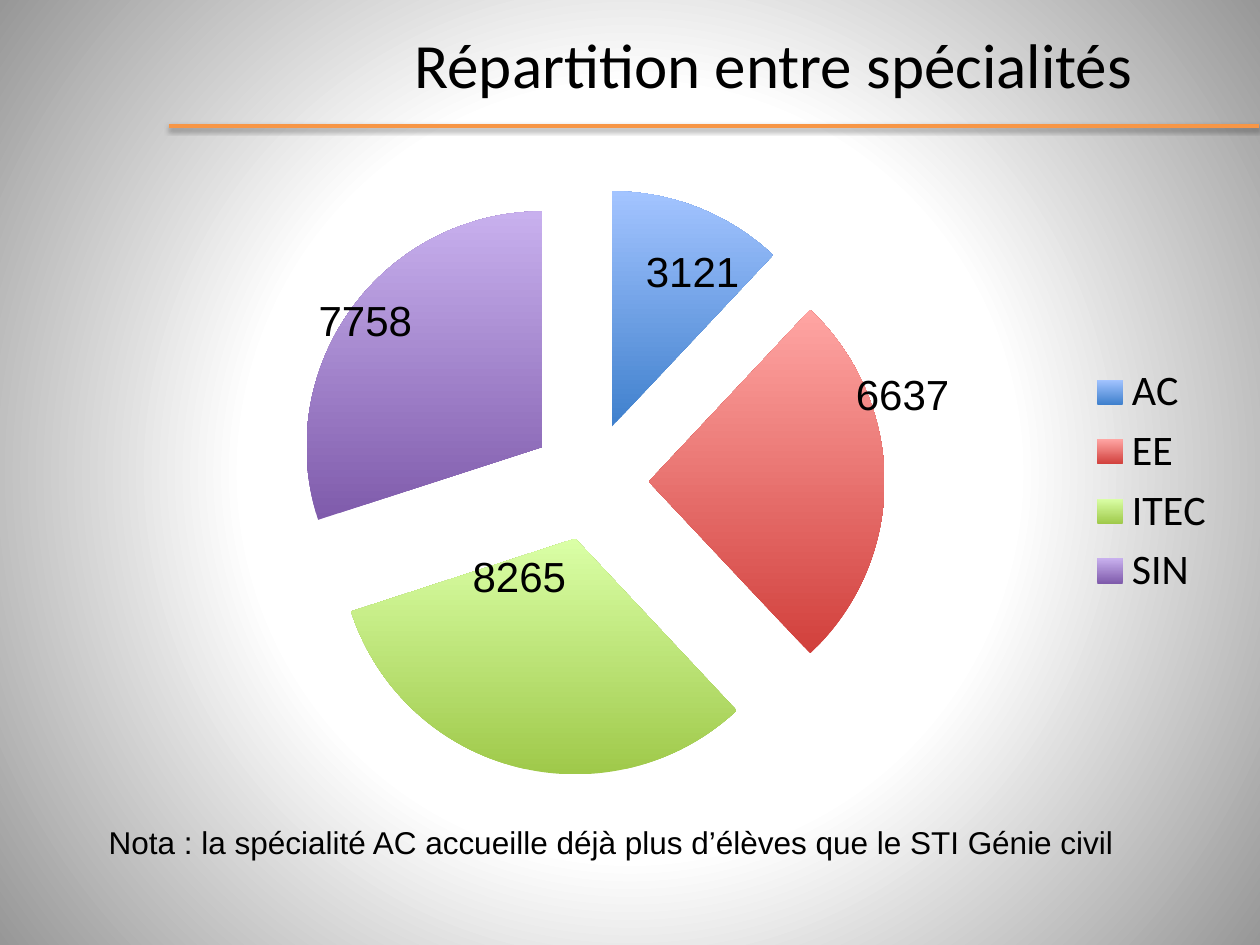
"""Build the slide showing how pupils are split between specialities."""
import pptx
import pptx.chart.data
import pptx.dml.color
import pptx.enum.chart
import pptx.enum.shapes
import pptx.enum.text
import pptx.oxml
import pptx.oxml.ns
import pptx.util

Pt = pptx.util.Pt
RGBColor = pptx.dml.color.RGBColor

BLACK = RGBColor(0x00, 0x00, 0x00)
ORANGE = RGBColor(0xF7, 0x96, 0x46)

TITLE = "Répartition entre spécialités"
NOTE = "Nota : la spécialité AC accueille déjà plus d’élèves que le STI Génie civil"
SPECIALITIES = [
    ("AC", 12, RGBColor(0x3F, 0x80, 0xCD), RGBColor(0xA3, 0xC4, 0xFF)),
    ("EE", 26, RGBColor(0xD1, 0x40, 0x3C), RGBColor(0xFF, 0xA5, 0xA3)),
    ("ITEC", 32, RGBColor(0x9F, 0xC9, 0x4A), RGBColor(0xDA, 0xFF, 0xA6)),
    ("SIN", 30, RGBColor(0x7F, 0x5B, 0xAB), RGBColor(0xC8, 0xB0, 0xEE)),
]
HEADCOUNTS = [
    ("3121", 362, 137),
    ("6637", 482, 207),
    ("8265", 263, 311),
    ("7758", 175, 165),
]

NS = pptx.oxml.ns.nsdecls("a")
BACKDROP = f"""<a:gradFill {NS} rotWithShape="1"><a:gsLst>
<a:gs pos="0"><a:srgbClr val="FFFFFF"/></a:gs>
<a:gs pos="49000"><a:srgbClr val="FFFFFF"/></a:gs>
<a:gs pos="100000"><a:srgbClr val="979797"/></a:gs></a:gsLst>
<a:path path="circle"><a:fillToRect l="50000" t="50000" r="50000" b="50000"/></a:path>
</a:gradFill>"""
RULE_SHADOW = f"""<a:effectLst {NS}>
<a:outerShdw blurRad="{Pt(3.1)}" dist="{Pt(1.6)}" dir="5400000" rotWithShape="0">
<a:srgbClr val="000000"><a:alpha val="38000"/></a:srgbClr></a:outerShdw></a:effectLst>"""


def style(font, size, name):
    font.size, font.name = Pt(size), name
    font.color.rgb = BLACK


def add_backdrop(slide):
    slide.background.fill.gradient()
    default = slide.element.xpath(".//p:bgPr/a:gradFill")[0]
    default.getparent().replace(default, pptx.oxml.parse_xml(BACKDROP))


def add_heading(slide):
    rule = slide.shapes.add_connector(
        pptx.enum.shapes.MSO_CONNECTOR.STRAIGHT, Pt(96.5), Pt(72), Pt(719.5), Pt(72))
    rule.line.color.rgb = ORANGE
    rule.line.width = Pt(2)
    rule.element.spPr.append(pptx.oxml.parse_xml(RULE_SHADOW))

    title = slide.shapes.title
    title.left, title.top, title.width, title.height = Pt(164), Pt(0), Pt(556), Pt(72)
    title.text_frame.text = TITLE
    title.text_frame.vertical_anchor = pptx.enum.text.MSO_ANCHOR.MIDDLE
    heading = title.text_frame.paragraphs[0]
    heading.alignment = pptx.enum.text.PP_ALIGN.CENTER
    style(heading.font, 36, "Calibri")


def add_pie(slide):
    shares = pptx.chart.data.CategoryChartData()
    shares.categories = [name for name, *_ in SPECIALITIES]
    shares.add_series("Series 1", [share for _, share, *_ in SPECIALITIES])
    chart = slide.shapes.add_chart(
        pptx.enum.chart.XL_CHART_TYPE.PIE_EXPLODED,
        Pt(55), Pt(97), Pt(648), Pt(356.5), shares).chart
    style(chart.font, 18, "Calibri")
    chart.has_title = False
    chart.has_legend = True
    chart.legend.position = pptx.enum.chart.XL_LEGEND_POSITION.RIGHT
    chart.legend.include_in_layout = False
    style(chart.legend.font, 24, "Calibri")

    pie = chart.plots[0]
    pie.vary_by_categories = True
    for explosion in chart.element.xpath(".//c:explosion"):
        explosion.set("val", "25")
    for index, (_, _, dark, light) in enumerate(SPECIALITIES):
        fill = pie.series[0].points[index].format.fill
        fill.gradient()
        fill.gradient_angle = 90
        for stop, color in zip(fill.gradient_stops, (dark, light)):
            stop.color.rgb = color


def add_text(slide, text, left, top, width, height, size):
    frame = slide.shapes.add_textbox(Pt(left), Pt(top), Pt(width), Pt(height)).text_frame
    frame.word_wrap = True
    frame.text = text
    style(frame.paragraphs[0].font, size, "Arial")


def main():
    deck = pptx.Presentation()
    deck.slide_width, deck.slide_height = Pt(720), Pt(540)
    slide = deck.slides.add_slide(deck.slide_layouts.get_by_name("Title Only"))
    add_backdrop(slide)
    add_heading(slide)
    add_pie(slide)
    for count, left, top in HEADCOUNTS:
        add_text(slide, count, left, top, 69, 36, 24)
    add_text(slide, NOTE, 55, 467, 623, 29, 18)
    deck.save("out.pptx")


if __name__ == "__main__":
    main()
